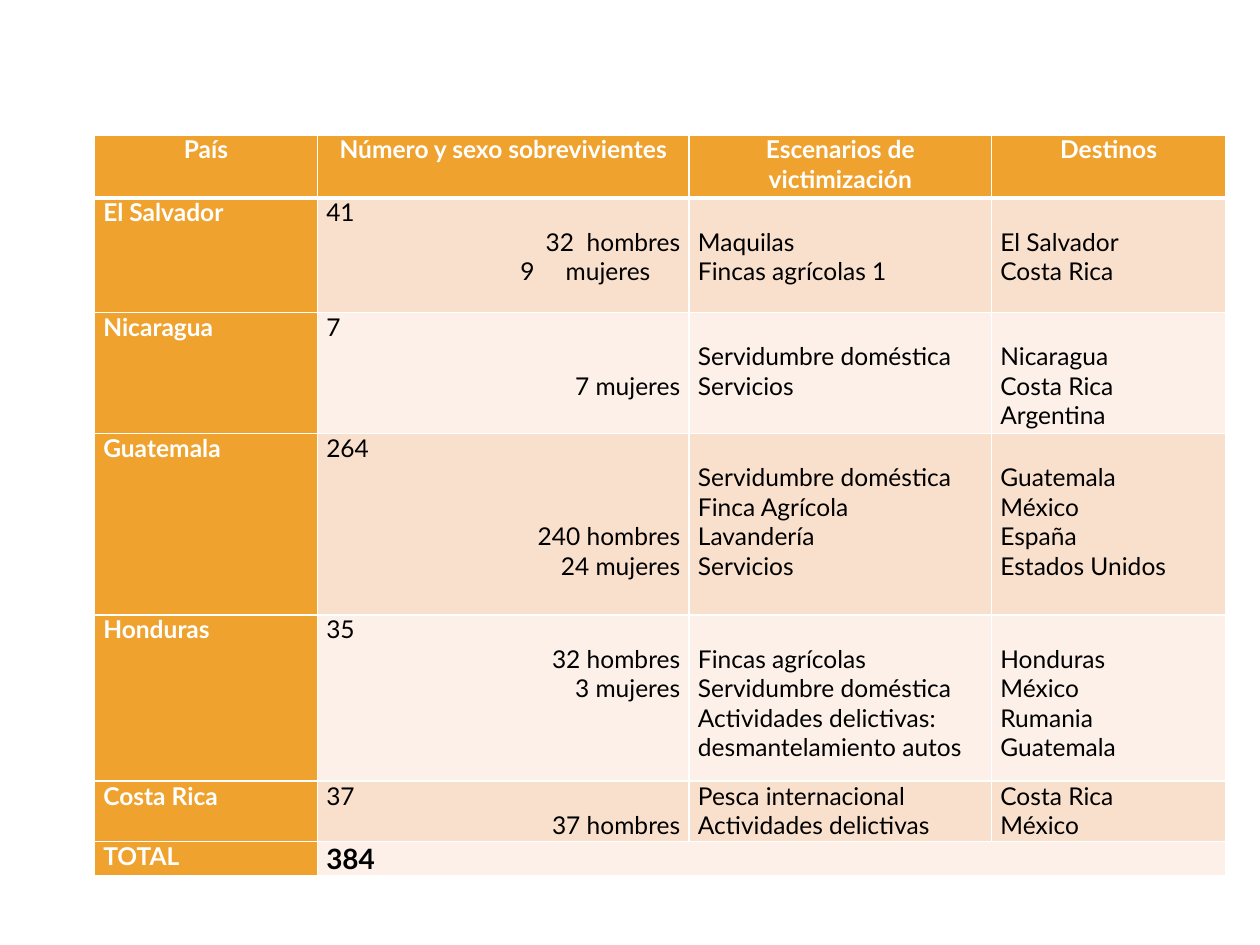
import pptx
import pptx.util
import pptx.dml.color
import pptx.enum.text
import pptx.oxml.ns
import lxml.etree

Inches = pptx.util.Inches
Pt = pptx.util.Pt
RGBColor = pptx.dml.color.RGBColor
ALIGN = pptx.enum.text.PP_ALIGN
qn = pptx.oxml.ns.qn

ORANGE = RGBColor(0xF0, 0xA2, 0x2E)
PEACH = RGBColor(0xF9, 0xE0, 0xCD)
CREAM = RGBColor(0xFC, 0xF0, 0xE8)
WHITE = RGBColor(0xFF, 0xFF, 0xFF)
BLACK = RGBColor(0, 0, 0)

FONT = "Lato"
LINE = Pt(16.8)
COLUMN_WIDTHS = [1.77, 2.95, 2.4, 1.86]
ROW_HEIGHTS = [0.5, 0.91, 0.96, 1.44, 1.32, 0.48, 0.27]
HEADERS = ["País", "Número y sexo sobrevivientes", "Escenarios de victimización", "Destinos"]

# fields: country, total, lines skipped after it, sexes, lines skipped above, scenarios, destinations
COUNTRIES = [
    ("El Salvador", "41", 0, ["32  hombres", "\t9\tmujeres"], 1,
     ["Maquilas", "Fincas agrícolas 1"], ["El Salvador", "Costa Rica"]),
    ("Nicaragua", "7", 1, ["7 mujeres"], 1,
     ["Servidumbre doméstica", "Servicios"], ["Nicaragua", "Costa Rica", "Argentina"]),
    ("Guatemala", "264", 2, ["240 hombres", "24 mujeres"], 1,
     ["Servidumbre doméstica", "Finca Agrícola", "Lavandería", "Servicios"],
     ["Guatemala", "México", "España", "Estados Unidos"]),
    ("Honduras", "35", 0, ["32 hombres", "3 mujeres"], 1,
     ["Fincas agrícolas", "Servidumbre doméstica",
      "Actividades delictivas: desmantelamiento autos"],
     ["Honduras", "México", "Rumania", "Guatemala"]),
    ("Costa Rica", "37", 0, ["37 hombres"], 0,
     ["Pesca internacional", "Actividades delictivas"], ["Costa Rica", "México"]),
]


def set_borders(cell, top, bottom):
    properties = cell._tc.get_or_add_tcPr()
    for tag, width in (("lnL", 1), ("lnR", 1), ("lnT", top), ("lnB", bottom)):
        line = lxml.etree.SubElement(properties, qn("a:" + tag), w=str(Pt(width)))
        fill = lxml.etree.SubElement(line, qn("a:solidFill"))
        lxml.etree.SubElement(fill, qn("a:srgbClr"), val=str(WHITE))


def style_cell(cell, row, fill):
    set_borders(cell, 3 if row == 1 else 1, 3 if row == 0 else 1)
    cell.fill.solid()
    cell.fill.fore_color.rgb = fill
    cell.margin_left = cell.margin_right = Inches(0.07)
    cell.margin_top = cell.margin_bottom = 0


def write_cell(cell, lines, color=BLACK, bold=False, size=14, align=ALIGN.LEFT):
    cell.text_frame.text = "\n".join(lines)
    for para in cell.text_frame.paragraphs:
        para.alignment = align
        for span in para.runs:
            span.font.name = FONT
            span.font.size = Pt(size)
            span.font.bold = bold
            span.font.color.rgb = color


def add_tab_stops(para, positions):
    stops = lxml.etree.SubElement(para._p.get_or_add_pPr(), qn("a:tabLst"))
    for position in positions:
        lxml.etree.SubElement(stops, qn("a:tab"), pos=str(Inches(position)), algn="l")


def write_survivors(cell, total, skipped, sexes):
    write_cell(cell, [total] + sexes)
    paras = cell.text_frame.paragraphs[1:]
    paras[0].space_before = skipped * LINE
    for para in paras:
        if "\t" in para.text:
            add_tab_stops(para, [1.54, 1.9])
        else:
            para.alignment = ALIGN.RIGHT


def add_survivor_table(page, left, top, width, height):
    row_count, column_count = len(ROW_HEIGHTS), len(COLUMN_WIDTHS)
    table = page.shapes.add_table(row_count, column_count, left, top, width, height).table
    for column, size in zip(table.columns, COLUMN_WIDTHS):
        column.width = Inches(size)
    for row, size in zip(table.rows, ROW_HEIGHTS):
        row.height = Inches(size)
    last = row_count - 1
    table.cell(last, 1).merge(table.cell(last, column_count - 1))
    for row in range(row_count):
        band = PEACH if row % 2 else CREAM
        for column in range(column_count):
            fill = ORANGE if row == 0 or column == 0 else band
            style_cell(table.cell(row, column), row, fill)

    for column, header in enumerate(HEADERS):
        write_cell(table.cell(0, column), [header], WHITE, True, align=ALIGN.CENTER)
    for row, record in enumerate(COUNTRIES, 1):
        country, total, skipped, sexes, above, scenarios, destinations = record
        write_cell(table.cell(row, 0), [country], WHITE, True)
        write_survivors(table.cell(row, 1), total, skipped, sexes)
        for column, lines in ((2, scenarios), (3, destinations)):
            cell = table.cell(row, column)
            cell.margin_top = int(above * LINE)
            write_cell(cell, lines)
    write_cell(table.cell(last, 0), ["TOTAL"], WHITE, True)
    write_cell(table.cell(last, 1), ["384"], bold=True, size=16)


def main():
    deck = pptx.Presentation()
    deck.slide_width = Inches(10)
    deck.slide_height = Inches(7.5)
    page = deck.slides.add_slide(deck.slide_layouts[6])
    add_survivor_table(page, Inches(0.75), Inches(1.07), Inches(8.98), Inches(5.88))
    deck.save("out.pptx")


if __name__ == "__main__":
    main()
